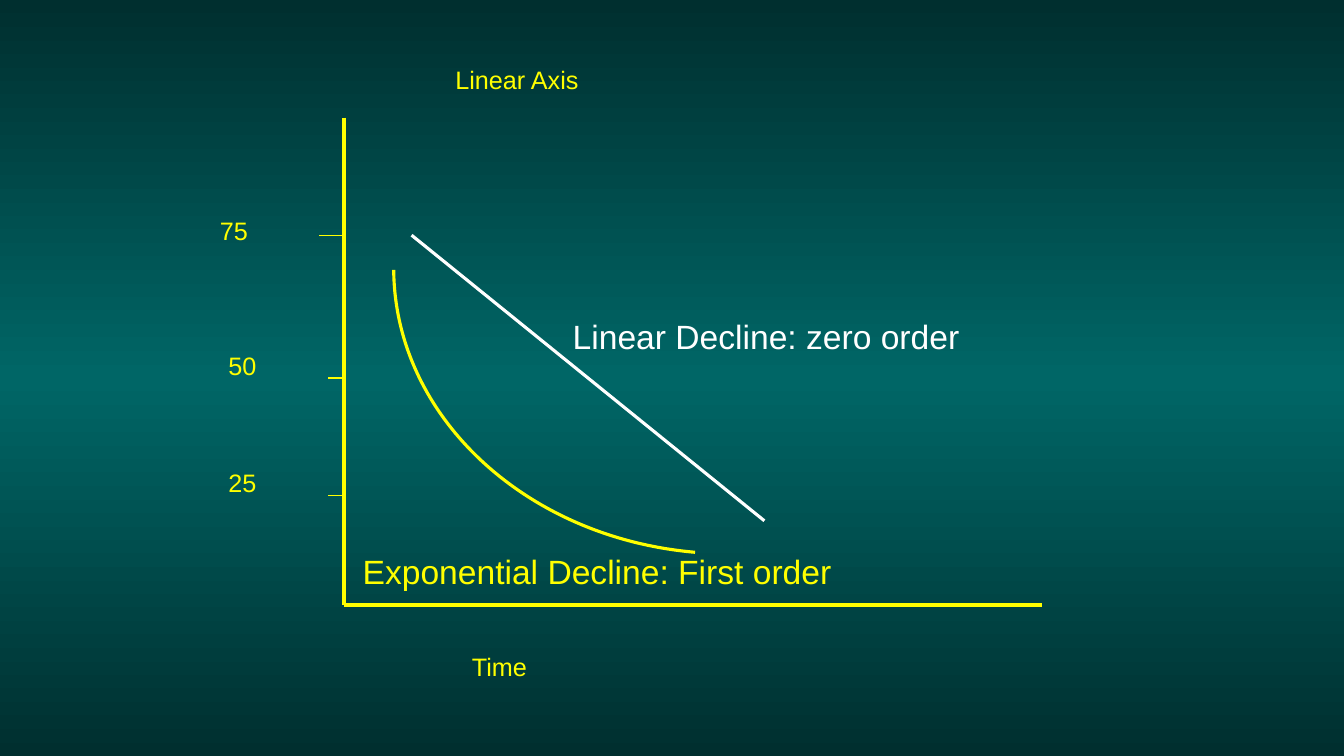
from copy import deepcopy
from dataclasses import dataclass

from lxml.etree import SubElement
from pptx import Presentation
from pptx.dml.color import RGBColor
from pptx.enum.shapes import MSO_CONNECTOR
from pptx.enum.text import MSO_ANCHOR, MSO_AUTO_SIZE, PP_ALIGN
from pptx.oxml.ns import qn
from pptx.shapes.autoshape import Shape
from pptx.slide import Slide
from pptx.util import Emu, Pt

EMU_PER_PX = 9525


@dataclass(frozen=True)
class Theme:
    yellow: RGBColor = RGBColor(0xFF, 0xFF, 0x00)
    white: RGBColor = RGBColor(0xFF, 0xFF, 0xFF)
    dark_teal: RGBColor = RGBColor(0x00, 0x2F, 0x2F)
    teal: RGBColor = RGBColor(0x00, 0x66, 0x66)
    font: str = "Arial"
    label_size: int = 18
    curve_label_size: int = 24
    axis_width: float = 3
    curve_width: float = 2.25
    tick_width: float = 0.75


THEME = Theme()


@dataclass(frozen=True)
class Label:
    text: str
    left: int
    top: int
    width: int
    height: int = 38
    size: int = THEME.label_size
    color: RGBColor = THEME.yellow


@dataclass(frozen=True)
class Line:
    start: tuple[int, int]
    end: tuple[int, int]
    width: float
    color: RGBColor = THEME.yellow


@dataclass(frozen=True)
class Tick:
    y: int
    length: int
    label: Label


AXIS_X, AXIS_TOP, AXIS_Y, AXIS_RIGHT = 328, 112, 576, 992

TITLE = Label("Linear Axis", 424, 56, 272)
LABELS = [
    Label("Time", 440, 616, 336),
    Label("Exponential Decline: First order", 336, 520, 576, 48,
          THEME.curve_label_size),
    Label("Linear Decline: zero order", 536, 296, 400, 48,
          THEME.curve_label_size, THEME.white),
]
TICKS = [
    Tick(472, 16, Label("25", 208, 440, 88)),
    Tick(360, 16, Label("50", 208, 329, 88)),
    Tick(224, 24, Label("75", 200, 200, 112)),
]
LINES = [
    Line((AXIS_X, AXIS_TOP), (AXIS_X, AXIS_Y), THEME.axis_width),
    Line((AXIS_X, AXIS_Y), (AXIS_RIGHT, AXIS_Y), THEME.axis_width),
    Line((392, 224), (728, 496), THEME.curve_width, THEME.white),
]
# Start, two control points and end of the exponential curve
DECLINE_CURVE = [(375, 257), (376, 396), (500, 512), (662, 526)]


def px(value: int) -> Emu:
    return Emu(value * EMU_PER_PX)


def paint_background(page: Slide) -> None:
    fill = page.background.fill
    fill.gradient()
    fill.gradient_angle = 90
    stop_list = page.element.find(".//" + qn("a:gsLst"))
    stop_list.append(deepcopy(stop_list[0]))
    colors = (THEME.dark_teal, THEME.teal, THEME.dark_teal)
    for stop, position, color in zip(fill.gradient_stops, (0, 0.5, 1), colors):
        stop.position = position
        stop.color.rgb = color


def write_label(box: Shape, label: Label) -> None:
    box.left, box.top = px(label.left), px(label.top)
    box.width, box.height = px(label.width), px(label.height)
    frame = box.text_frame
    frame.word_wrap = True
    frame.auto_size = MSO_AUTO_SIZE.SHAPE_TO_FIT_TEXT
    frame.vertical_anchor = MSO_ANCHOR.TOP
    para = frame.paragraphs[0]
    para.alignment = PP_ALIGN.LEFT
    para.line_spacing = 1.0
    span = para.add_run()
    span.text = label.text
    span.font.name = THEME.font
    span.font.size = Pt(label.size)
    span.font.color.rgb = label.color


def add_label(page: Slide, label: Label) -> None:
    write_label(page.shapes.add_textbox(0, 0, 0, 0), label)


def add_line(page: Slide, line: Line) -> None:
    connector = page.shapes.add_connector(
        MSO_CONNECTOR.STRAIGHT, *map(px, line.start + line.end))
    connector.line.color.rgb = line.color
    connector.line.width = Pt(line.width)
    SubElement(connector.element.spPr, qn("a:effectLst"))


def add_curve(page: Slide, points: list[tuple[int, int]]) -> None:
    builder = page.shapes.build_freeform(*points[0], scale=EMU_PER_PX)
    builder.add_line_segments(points[1:], close=False)
    curve = builder.convert_to_shape()
    curve.shadow.inherit = False
    curve.fill.background()
    curve.line.color.rgb = THEME.yellow
    curve.line.width = Pt(THEME.curve_width)
    # Join the three segments into one cubic Bézier
    outline = curve.element.find(".//" + qn("a:path"))
    segments = outline.findall(qn("a:lnTo"))
    bezier = SubElement(outline, qn("a:cubicBezTo"))
    for segment in segments:
        bezier.append(segment[0])
        outline.remove(segment)


def main() -> None:
    deck = Presentation()
    deck.slide_width, deck.slide_height = px(1280), px(720)
    page = deck.slides.add_slide(deck.slide_layouts.get_by_name("Title Only"))
    paint_background(page)
    write_label(page.shapes.title, TITLE)

    # Axes and linear decline
    for line in LINES:
        add_line(page, line)

    # Scale on the vertical axis
    for tick in TICKS:
        add_line(page, Line((AXIS_X, tick.y), (AXIS_X - tick.length, tick.y),
                            THEME.tick_width))
        add_label(page, tick.label)

    # Exponential decline and captions
    add_curve(page, DECLINE_CURVE)
    for label in LABELS:
        add_label(page, label)

    deck.save("out.pptx")


if __name__ == "__main__":
    main()
